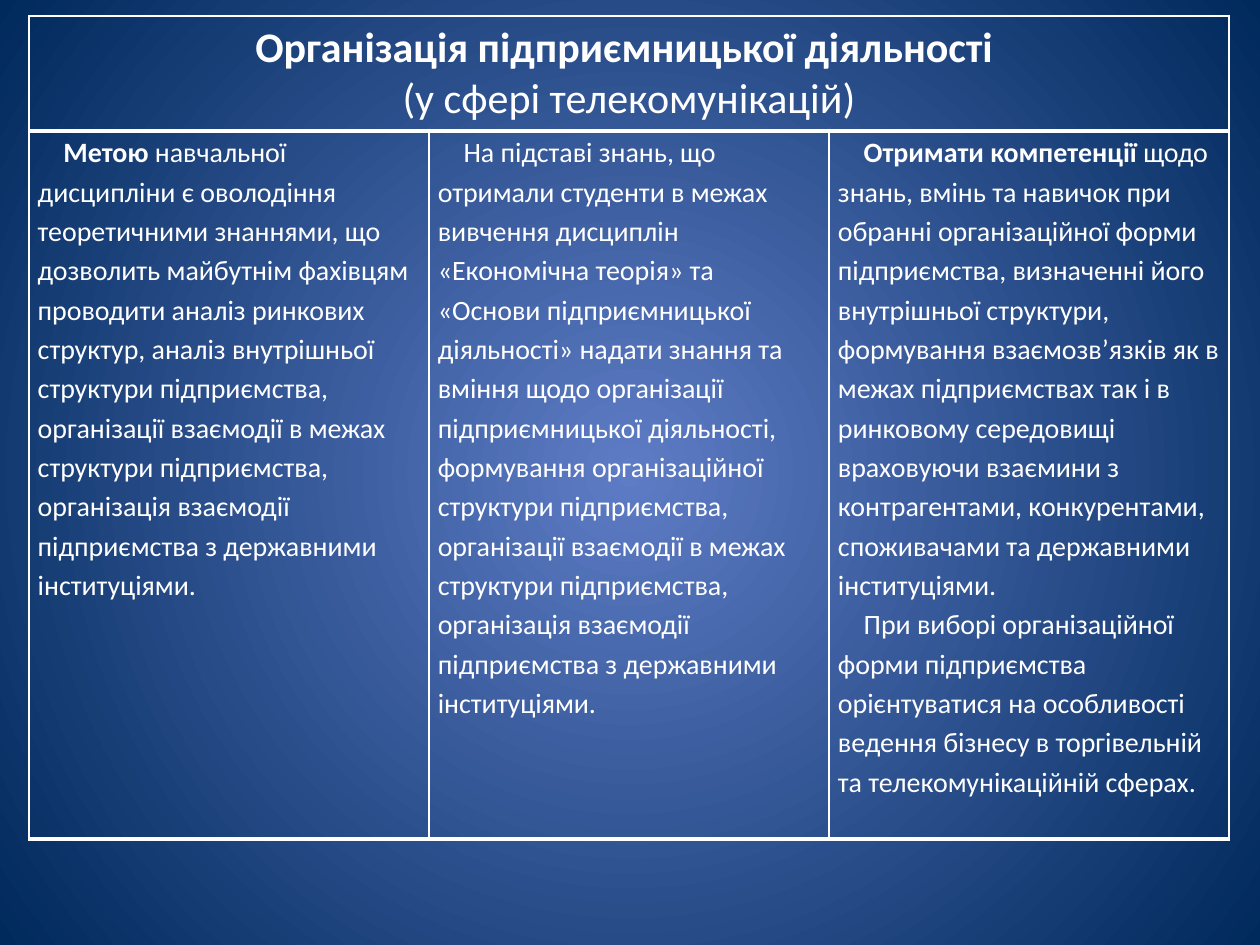
from lxml import etree
from pptx import Presentation
from pptx import util as u
from pptx.dml.color import RGBColor
from pptx.enum import text
from pptx.oxml import ns

# Content: each paragraph is a list of (words, bold) runs
HEAD = [
    [("Організація підприємницької діяльності ", True)],
    [("(у сфері телекомунікацій)", False)],
]
BODY = [
    [[("Метою ", True),
      ("навчальної дисципліни є оволодіння теоретичними знаннями, що дозволить "
       "майбутнім фахівцям проводити аналіз ринкових структур, аналіз внутрішньої "
       "структури підприємства, організації взаємодії в межах структури "
       "підприємства, організація взаємодії підприємства з державними "
       "інституціями.", False)]],
    [[("На підставі знань, що отримали студенти в межах вивчення дисциплін "
       "«Економічна теорія» та «Основи підприємницької діяльності» надати знання "
       "та вміння щодо організації підприємницької діяльності, формування "
       "організаційної структури підприємства, організації взаємодії в межах "
       "структури підприємства, організація взаємодії підприємства з державними "
       "інституціями.", False)]],
    [[("Отримати компетенції", True),
      (" щодо знань, вмінь та навичок при обранні організаційної форми "
       "підприємства, визначенні його внутрішньої структури, формування "
       "взаємозв’язків як в межах підприємствах так і в ринковому середовищі "
       "враховуючи взаємини з контрагентами, конкурентами, споживачами та "
       "державними інституціями.", False)],
     [("При виборі організаційної форми підприємства орієнтуватися на "
       "особливості ведення бізнесу в торгівельній та телекомунікаційній "
       "сферах.", False)]],
]

WHITE = RGBColor(0xFF, 0xFF, 0xFF)
GLOW = RGBColor(0x5E, 0x7C, 0xC5)
NAVY = RGBColor(0x00, 0x29, 0x5C)
FONT = "Calibri"
LEFT, TOP, WIDTH = u.Cm(0.58), u.Cm(0.32), u.Cm(24.2)
ROWS = [u.Cm(2.31), u.Cm(14.27)]
SIDE = u.Cm(0.18)
INDENT = u.Cm(0.52)
THIN, THICK = u.Pt(1), u.Pt(3)


def write(cell, paras, size):
    frame = cell.text_frame
    for i, runs in enumerate(paras):
        para = frame.paragraphs[0] if i == 0 else frame.add_paragraph()
        for words, bold in runs:
            run = para.add_run()
            run.text = words
            font = run.font
            font.name, font.size, font.bold = FONT, u.Pt(size), bold
            font.color.rgb = WHITE
    return frame.paragraphs


def edge(cell, **lines):
    """Draw white cell borders; keys L, R, T, B give the widths."""
    props = cell._tc.get_or_add_tcPr()
    for i, side in enumerate("LRTB"):
        line = etree.Element(ns.qn("a:ln" + side), w=str(int(lines[side])))
        fill = etree.SubElement(line, ns.qn("a:solidFill"))
        etree.SubElement(fill, ns.qn("a:srgbClr"), val=str(WHITE))
        props.insert(i, line)


deck = Presentation()
deck.slide_width, deck.slide_height = u.Cm(25.4), u.Cm(19.05)
slide = deck.slides.add_slide(deck.slide_layouts[6])

# Radial background
fill = slide.background.fill
fill.gradient()
for stop, color in zip(fill.gradient_stops, (GLOW, NAVY)):
    stop.color.rgb = color
lin = next(slide.element.iter(ns.qn("a:lin")))
ring = etree.Element(ns.qn("a:path"), path="circle")
etree.SubElement(ring, ns.qn("a:fillToRect"), l="50000", t="50000", r="50000", b="50000")
lin.getparent().replace(lin, ring)

# Table grid
count = len(BODY)
table = slide.shapes.add_table(2, count, LEFT, TOP, WIDTH, sum(ROWS)).table
table.first_row = table.horz_banding = False
for row, tall in zip(table.rows, ROWS):
    row.height = tall
for col in table.columns:
    col.width = WIDTH // count
for cell in table.iter_cells():
    cell.fill.background()

# Heading
head = table.cell(0, 0)
head.merge(table.cell(0, count - 1))
for para in write(head, HEAD, 24):
    para.alignment = text.PP_ALIGN.CENTER
for c in range(count):
    edge(table.cell(0, c), L=THIN, R=THIN, T=THIN, B=THICK)

# Columns
for c, paras in enumerate(BODY):
    cell = table.cell(1, c)
    cell.margin_left = cell.margin_right = SIDE
    cell.margin_top = cell.margin_bottom = 0
    for para in write(cell, paras, 16):
        para.line_spacing = 1.15
        props = para._p.get_or_add_pPr()
        props.set("marL", "0")
        props.set("indent", str(int(INDENT)))
    edge(cell, L=THIN, R=THIN, T=THICK, B=THICK)

deck.save("out.pptx")
